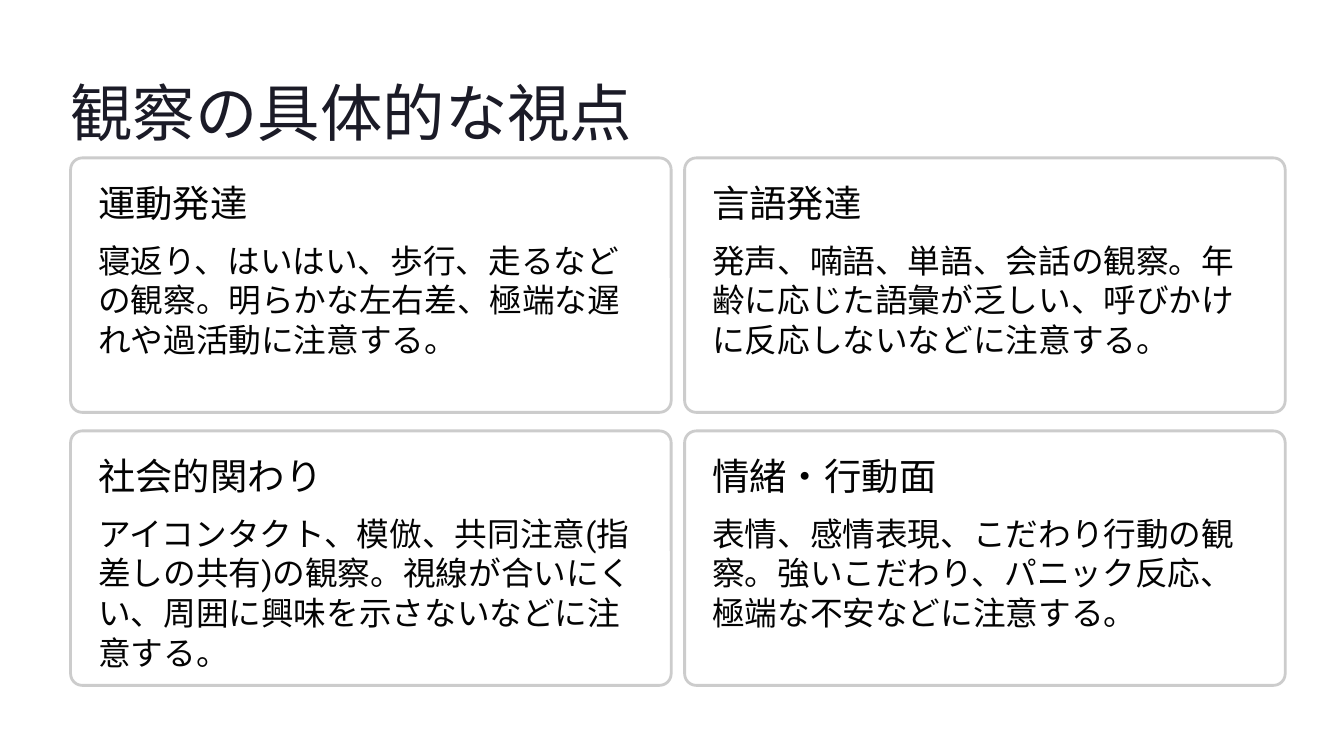
from dataclasses import dataclass

from lxml import etree
from pptx import Presentation
from pptx import util as u
from pptx.dml.color import RGBColor
from pptx.enum import shapes, text
from pptx.oxml.ns import qn
from pptx.slide import Slide

WHITE = RGBColor(0xFF, 0xFF, 0xFF)
BORDER = RGBColor(0xCC, 0xCC, 0xCC)
HEADLINE = RGBColor(0x1B, 0x1B, 0x27)
INK = RGBColor(0x03, 0x03, 0x03)

SLIDE_WIDTH, SLIDE_HEIGHT = 16, 9
GRID_LEFT, GRID_TOP = 0.84, 1.88
CARD_WIDTH, CARD_HEIGHT = 7.15, 3.03
COLUMN_PITCH = CARD_WIDTH + 0.16
ROW_PITCH = CARD_HEIGHT + 0.22
PADDING = 0.33


@dataclass(frozen=True)
class Box:
    left: float
    top: float
    width: float
    height: float

    def lengths(self) -> list[u.Length]:
        return [u.Inches(n) for n in (self.left, self.top, self.width, self.height)]


@dataclass(frozen=True)
class Style:
    font: str
    size: float
    leading: float
    color: RGBColor
    wrap: bool = False


@dataclass(frozen=True)
class Viewpoint:
    column: int
    row: int
    heading: str
    detail: str


TITLE_STYLE = Style("Inter", 53.5, 67, HEADLINE)
HEADING_STYLE = Style("Inter", 32, 33.5, INK)
DETAIL_STYLE = Style("Roboto", 28, 34, INK, wrap=True)

VIEWPOINTS = [
    Viewpoint(0, 0, "運動発達",
              "寝返り、はいはい、歩行、走るなどの観察。明らかな左右差、極端な遅れや過活動に注意する。"),
    Viewpoint(1, 0, "言語発達",
              "発声、喃語、単語、会話の観察。年齢に応じた語彙が乏しい、呼びかけに反応しないなどに注意する。"),
    Viewpoint(0, 1, "社会的関わり",
              "アイコンタクト、模倣、共同注意(指差しの共有)の観察。視線が合いにくい、周囲に興味を示さないなどに注意する。"),
    Viewpoint(1, 1, "情緒・行動面",
              "表情、感情表現、こだわり行動の観察。強いこだわり、パニック反応、極端な不安などに注意する。"),
]


def apply_format(target: object, values: dict[str, object]) -> None:
    for name, value in values.items():
        setattr(target, name, value)


def add_words(slide: Slide, box: Box, words: str, style: Style) -> None:
    frame = slide.shapes.add_textbox(*box.lengths()).text_frame
    apply_format(frame, {
        "margin_left": 0, "margin_top": 0, "margin_right": 0, "margin_bottom": 0,
        "word_wrap": style.wrap, "vertical_anchor": text.MSO_ANCHOR.TOP,
    })
    paragraph = frame.paragraphs[0]
    apply_format(paragraph, {
        "alignment": text.PP_ALIGN.LEFT, "line_spacing": u.Pt(style.leading),
    })
    run = paragraph.add_run()
    run.text = words
    apply_format(run.font, {"name": style.font, "size": u.Pt(style.size)})
    run.font.color.rgb = style.color


def add_card(slide: Slide, box: Box) -> None:
    card = slide.shapes.add_shape(shapes.MSO_SHAPE.ROUNDED_RECTANGLE, *box.lengths())
    card.adjustments[0] = 0.046
    card.shadow.inherit = False
    card.fill.solid()
    card.fill.fore_color.rgb = WHITE
    fill_color = card.fill._xPr.find(qn("a:solidFill"))[0]
    etree.SubElement(fill_color, qn("a:alpha"), val="95000")
    card.line.color.rgb = BORDER
    card.line.width = u.Pt(2.4)


def add_viewpoint(slide: Slide, viewpoint: Viewpoint) -> None:
    left = GRID_LEFT + viewpoint.column * COLUMN_PITCH
    top = GRID_TOP + viewpoint.row * ROW_PITCH
    add_card(slide, Box(left, top, CARD_WIDTH, CARD_HEIGHT))
    inner = left + PADDING
    add_words(slide, Box(inner, top + PADDING, 3.81, 0.52), viewpoint.heading, HEADING_STYLE)
    add_words(slide, Box(inner, top + 0.98, 6.47, 1.58), viewpoint.detail, DETAIL_STYLE)


def main() -> None:
    deck = Presentation()
    apply_format(deck, {
        "slide_width": u.Inches(SLIDE_WIDTH), "slide_height": u.Inches(SLIDE_HEIGHT),
    })
    slide = deck.slides.add_slide(deck.slide_layouts[6])
    add_words(slide, Box(GRID_LEFT, 0.84, 7.48, 0.93), "観察の具体的な視点", TITLE_STYLE)
    for viewpoint in VIEWPOINTS:
        add_viewpoint(slide, viewpoint)
    deck.save("out.pptx")


if __name__ == "__main__":
    main()
